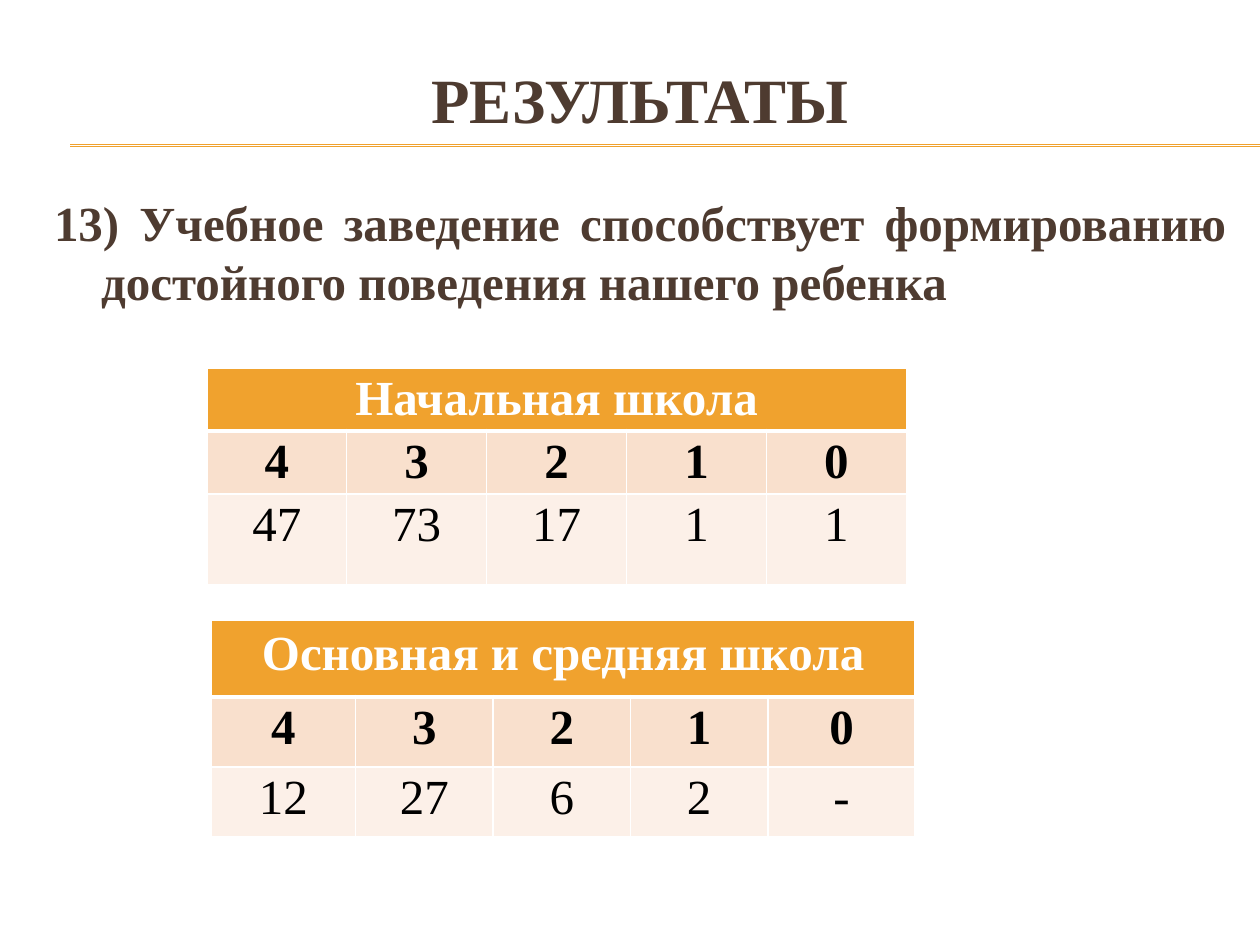
"""Build a slide of survey results with one table per school level."""
from dataclasses import dataclass

from lxml import etree
from pptx import Presentation
from pptx.dml.color import RGBColor
from pptx.enum.shapes import MSO_CONNECTOR
from pptx.enum.text import MSO_ANCHOR, PP_ALIGN
from pptx.oxml.ns import qn
from pptx.util import Cm, Pt

STRAIGHT = MSO_CONNECTOR.STRAIGHT
TOP, MIDDLE = MSO_ANCHOR.TOP, MSO_ANCHOR.MIDDLE
CENTER, JUSTIFY = PP_ALIGN.CENTER, PP_ALIGN.JUSTIFY


@dataclass(frozen=True)
class Theme:
    font: str = "Times New Roman"
    title_size: int = 36
    text_size: int = 28
    brown: str = "4E3B30"
    orange: str = "F0A22E"
    peach: str = "F9E0CD"
    cream: str = "FCF0E8"
    white: str = "FFFFFF"
    black: str = "000000"


THEME = Theme()
SCORES = ["4", "3", "2", "1", "0"]
TIGHT = {"margin_left": Cm(0.18), "margin_right": Cm(0.18),
         "margin_top": 0, "margin_bottom": 0}


def apply_format(target, values):
    for name, value in values.items():
        setattr(target, name, value)


def write(frame, text, color, size=THEME.text_size, bold=True, **layout):
    paragraph = frame.paragraphs[0]
    apply_format(paragraph, layout)
    run = paragraph.add_run()
    run.text = text
    apply_format(run.font, {"name": THEME.font, "size": Pt(size), "bold": bold})
    run.font.color.rgb = RGBColor.from_string(color)
    return paragraph


def add_text(slide, box, text, anchor, **style):
    frame = slide.shapes.add_textbox(*map(Cm, box)).text_frame
    apply_format(frame, {"word_wrap": True, "vertical_anchor": anchor})
    return write(frame, text, THEME.brown, **style)


def add_rule(slide, left, right, y):
    rule = slide.shapes.add_connector(STRAIGHT, Cm(left), Cm(y), Cm(right), Cm(y))
    rule.line.color.rgb = RGBColor.from_string(THEME.orange)
    rule.line.width = Pt(0.75)
    etree.SubElement(rule._element.spPr, qn("a:effectLst"))


def style_cell(cell, fill, bottom_width):
    properties = cell._tc.get_or_add_tcPr()
    for side, width in {"L": 1, "R": 1, "T": 1, "B": bottom_width}.items():
        border = etree.SubElement(properties, qn(f"a:ln{side}"), w=str(Pt(width)))
        solid = etree.SubElement(border, qn("a:solidFill"))
        etree.SubElement(solid, qn("a:srgbClr"), val=THEME.white)
    cell.fill.solid()
    cell.fill.fore_color.rgb = RGBColor.from_string(fill)


def add_score_table(slide, position, widths, heights, heading, counts, tight_heading):
    size = sum(widths), sum(heights)
    table = slide.shapes.add_table(
        len(heights), len(widths), *map(Cm, (*position, *size))).table
    for column, width in zip(table.columns, widths):
        column.width = Cm(width)
    for row, height in zip(table.rows, heights):
        row.height = Cm(height)
    table.cell(0, 0).merge(table.cell(0, len(widths) - 1))

    rows = [
        ([heading], THEME.orange, THEME.white, True, 3, tight_heading),
        (SCORES, THEME.peach, THEME.black, True, 1, True),
        (counts, THEME.cream, THEME.black, False, 1, True),
    ]
    for row, (texts, fill, color, bold, bottom_width, tight) in zip(table.rows, rows):
        for cell in row.cells:
            style_cell(cell, fill, bottom_width)
        for cell, text in zip(row.cells, texts):
            layout = {"alignment": CENTER}
            if tight:
                apply_format(cell, TIGHT)
                layout["line_spacing"] = 1.07
            write(cell.text_frame, text, color, bold=bold, **layout)


def main():
    deck = Presentation()
    apply_format(deck, {"slide_width": Cm(25.4), "slide_height": Cm(19.05)})
    slide = deck.slides.add_slide(deck.slide_layouts[6])

    for y in (2.92, 2.95):
        add_rule(slide, 1.42, 25.4, y)
    add_text(slide, (0.84, 0.79, 24.13, 2.39), "РЕЗУЛЬТАТЫ", MIDDLE,
             size=THEME.title_size, alignment=CENTER)
    statement = add_text(
        slide, (0.84, 3.76, 24.13, 13.1),
        "13) Учебное заведение способствует формированию "
        "достойного поведения нашего ребенка",
        TOP, alignment=JUSTIFY, space_before=Pt(5.6))
    hanging = statement._p.get_or_add_pPr()
    hanging.set("marL", str(Cm(0.95)))
    hanging.set("indent", str(-Cm(0.95)))

    add_score_table(slide, (4.17, 7.42), [2.82] * 5, [1.23, 1.23, 1.82],
                    "Начальная школа", ["47", "73", "17", "1", "1"], True)
    add_score_table(slide, (4.25, 12.51), [2.92, 2.77, 2.77, 2.77, 2.97],
                    [1.54, 1.41, 1.41], "Основная и средняя школа",
                    ["12", "27", "6", "2", "-"], False)
    deck.save("out.pptx")


if __name__ == "__main__":
    main()
